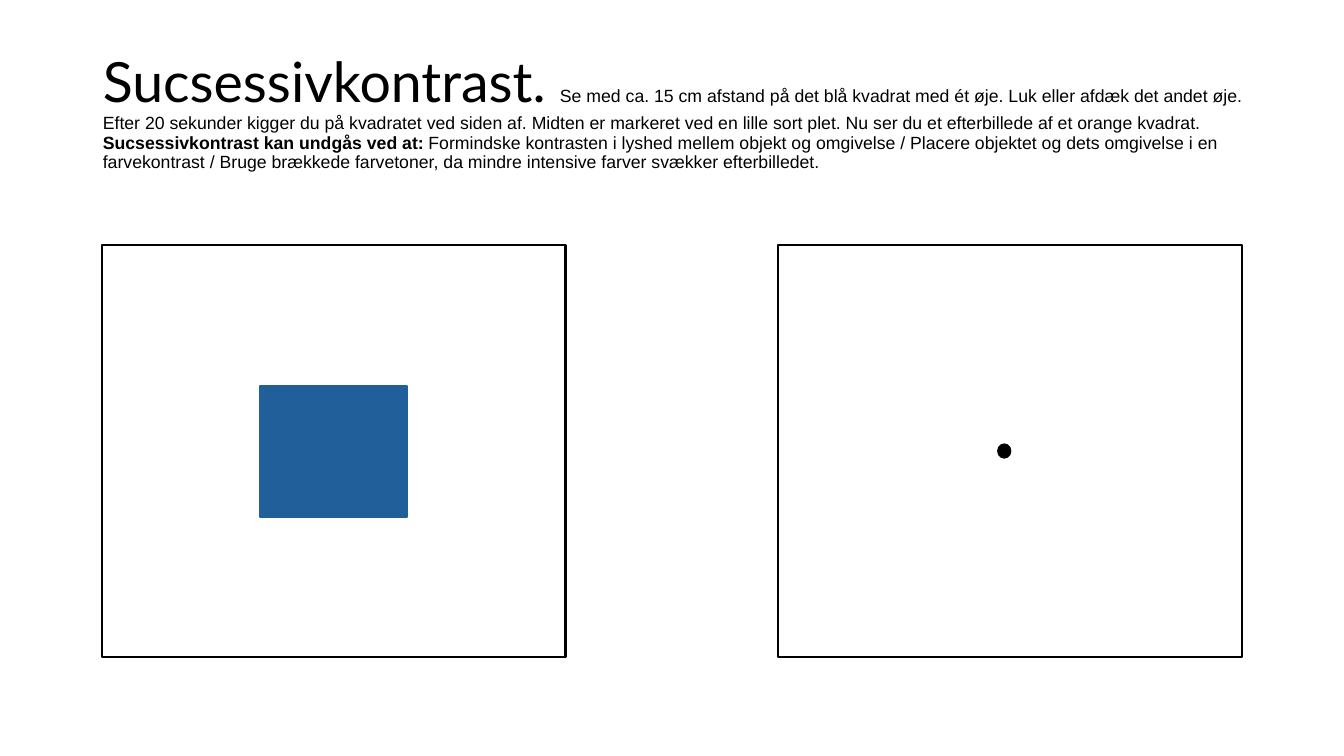
from pptx import Presentation
from pptx.dml.color import RGBColor
from pptx.enum.shapes import MSO_SHAPE
from pptx.enum.text import MSO_ANCHOR, MSO_AUTO_SIZE, PP_ALIGN
from pptx.util import Inches, Pt

RECT, OVAL = MSO_SHAPE.RECTANGLE, MSO_SHAPE.OVAL
MIDDLE, LEFT, FIXED = MSO_ANCHOR.MIDDLE, PP_ALIGN.LEFT, MSO_AUTO_SIZE.NONE
COLORS = {"black": "000000", "blue": "215F9A"}

deck = Presentation()
deck.slide_width, deck.slide_height = Inches(13.33), Inches(7.5)
slide = deck.slides.add_slide(deck.slide_layouts[5])

# Title with instructions
title = slide.shapes.title
title.left, title.top = Inches(0.92), Inches(0.4)
title.width, title.height = Inches(11.5), Inches(1.45)
frame = title.text_frame
frame.word_wrap = True
frame.auto_size = FIXED
frame.vertical_anchor = MIDDLE
para = frame.paragraphs[0]
para.alignment = LEFT
para.line_spacing = 0.9

PARTS = [
    ("Sucsessivkontrast. ", "Lato", 39.6, False),
    ("Se med ca. 15 cm afstand på det blå kvadrat med ét øje. "
     "Luk eller afdæk det andet øje. Efter 20 sekunder kigger du på "
     "kvadratet ved siden af. Midten er markeret ved en lille sort plet. "
     "Nu ser du et efterbillede af et orange kvadrat. ", "Arial", 12.6, False),
    ("Sucsessivkontrast kan undgås ved at: ", "Arial", 12.6, True),
    ("Formindske kontrasten i lyshed mellem objekt og omgivelse / "
     "Placere objektet og dets omgivelse i en farvekontrast / "
     "Bruge brækkede farvetoner, da mindre intensive farver svækker "
     "efterbilledet.", "Arial", 12.6, False),
]
for text, face, size, bold in PARTS:
    run = para.add_run()
    run.text = text
    run.font.name, run.font.size, run.font.bold = face, Pt(size), bold
    run.font.color.rgb = RGBColor.from_string(COLORS["black"])

# Two frames, the blue square and the black dot
SHAPES = [
    (RECT, 1.01, 2.43, 4.6, 4.09, None, "black"),
    (RECT, 7.72, 2.43, 4.6, 4.09, None, "black"),
    (RECT, 2.58, 3.83, 1.46, 1.3, "blue", "blue"),
    (OVAL, 9.9, 4.41, 0.12, 0.13, "black", "black"),
]
for kind, left, top, width, height, fill, line in SHAPES:
    shape = slide.shapes.add_shape(
        kind, Inches(left), Inches(top), Inches(width), Inches(height))
    shape.shadow.inherit = False
    if fill:
        shape.fill.solid()
        shape.fill.fore_color.rgb = RGBColor.from_string(COLORS[fill])
    else:
        shape.fill.background()
    shape.line.color.rgb = RGBColor.from_string(COLORS[line])
    shape.line.width = Pt(1.5)

deck.save("out.pptx")
